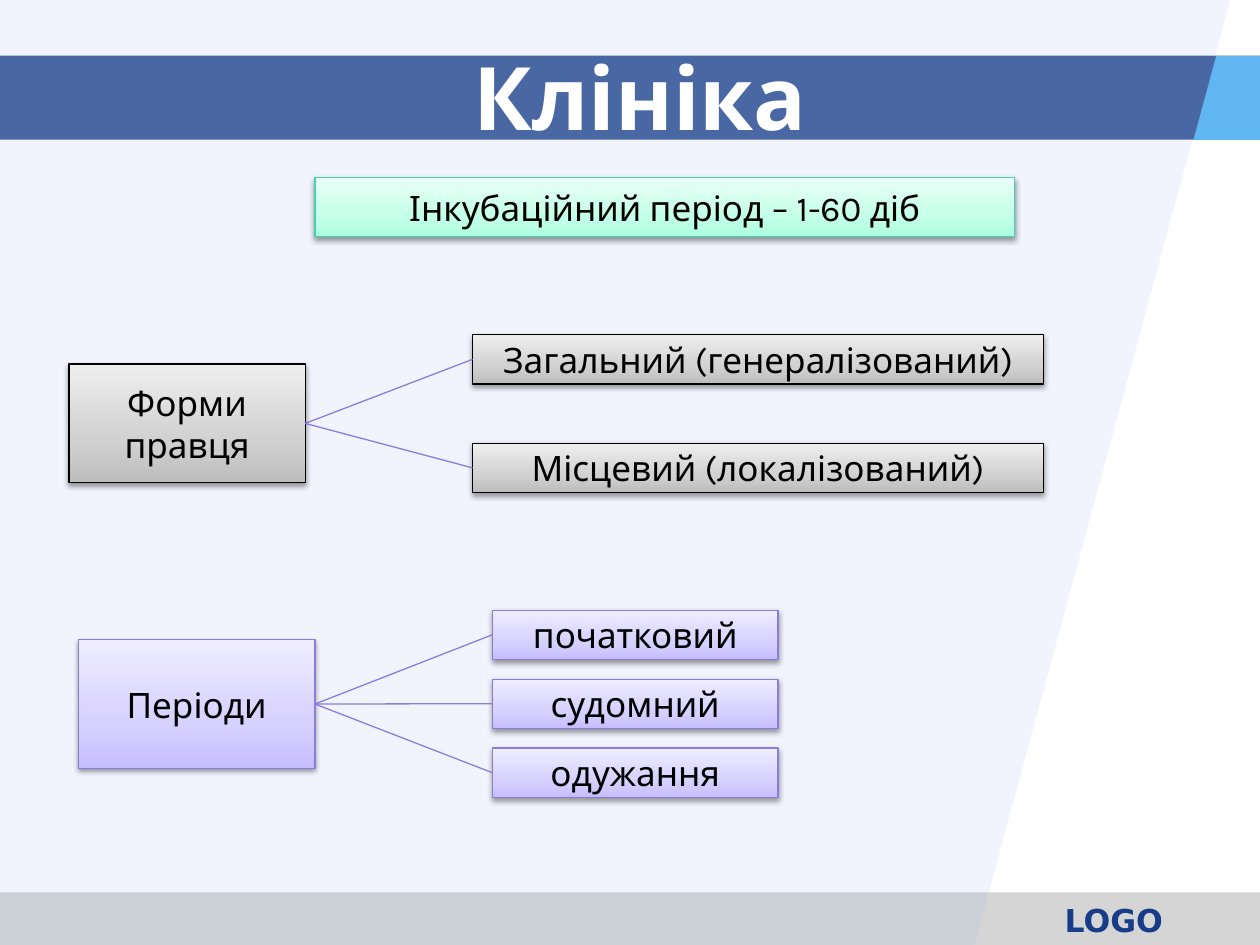
import pptx
import pptx.util
import pptx.dml.color
import pptx.enum.shapes
import pptx.enum.text
import pptx.oxml
import pptx.oxml.ns
import pptx.oxml.xmlchemy

Pt = pptx.util.Pt
qn = pptx.oxml.ns.qn

COLORS = {
    "footer": "969696", "panel": "94B1EC", "navy": "173D89", "sky": "5FB6F1",
    "white": "FFFFFF", "black": "000000", "violet": "8C7CDE", "mint": "47D1AD",
}
# Bottom, 35 % and top colours of each box, and its outline
GRADIENTS = {
    "mint": ("ADFFE2", "C4FFEA", "E9FFF7"),
    "black": ("BDBDBD", "D1D1D1", "EEEEEE"),
    "violet": ("C7BEFF", "D7D1FF", "EFEDFF"),
}
STOPS = (0, 35, 100)
FONT = "Karla"
CHILD_H = 28.1


def rgb(name):
    return pptx.dml.color.RGBColor.from_string(COLORS[name])


def add_child(parent, tag, **attrs):
    child = pptx.oxml.xmlchemy.OxmlElement(tag)
    for key, value in attrs.items():
        child.set(key, str(value))
    parent.append(child)
    return child


def paint(sp, color, alpha=100):
    """Flat fill without outline or shadow; alpha in percent."""
    sp.fill.solid()
    sp.fill.fore_color.rgb = rgb(color)
    sp.line.fill.background()
    sp.shadow.inherit = False
    if alpha < 100:
        clr = sp._element.spPr.find(qn("a:solidFill")).find(qn("a:srgbClr"))
        add_child(clr, "a:alpha", val=alpha * 1000)


def add_rect(s, x, y, w, h):
    kind = pptx.enum.shapes.MSO_SHAPE.RECTANGLE
    return s.shapes.add_shape(kind, Pt(x), Pt(y), Pt(w), Pt(h))


def add_band(s, x, y, w, h, color, alpha):
    paint(add_rect(s, x, y, w, h), color, alpha)


def add_polygon(s, points, color, alpha=100):
    fb = s.shapes.build_freeform(*points[0], scale=Pt(1))
    fb.add_line_segments(points[1:], close=True)
    paint(fb.convert_to_shape(), color, alpha)


def write(sp, text, size, color, font=FONT, bold=False):
    tf = sp.text_frame
    tf.word_wrap = True
    tf.vertical_anchor = pptx.enum.text.MSO_ANCHOR.MIDDLE
    tf.text = text
    p = tf.paragraphs[0]
    p.alignment = pptx.enum.text.PP_ALIGN.CENTER
    f = p.runs[0].font
    f.name, f.size, f.bold = font, Pt(size), bold
    f.color.rgb = rgb(color)


def add_label(s, x, y, w, h, *text_args, **text_options):
    write(s.shapes.add_textbox(Pt(x), Pt(y), Pt(w), Pt(h)), *text_args, **text_options)


def add_box(s, x, y, w, h, text, theme):
    """Gradient box with a soft shadow below it."""
    sp = add_rect(s, x, y, w, h)
    sp.fill.gradient()
    sp.fill.gradient_angle = 90
    stops = sp._element.spPr.find(qn("a:gradFill")).find(qn("a:gsLst"))
    for old in list(stops):
        stops.remove(old)
    for pos, color in zip(STOPS, GRADIENTS[theme]):
        add_child(add_child(stops, "a:gs", pos=pos * 1000), "a:srgbClr", val=color)
    sp.line.color.rgb = rgb(theme)
    sp.line.width = Pt(0.75)

    sp.shadow.inherit = False
    effects = sp._element.spPr.find(qn("a:effectLst"))
    shadow = add_child(effects, "a:outerShdw", blurRad=Pt(3.1), dist=Pt(1.6),
                       dir=90 * 60000, rotWithShape=0)
    clr = add_child(shadow, "a:srgbClr", val=COLORS["black"])
    add_child(clr, "a:alpha", val=38000)
    write(sp, text, 20, "black")
    return sp


def add_link(s, root, child):
    """Line from the right side of root to the left side of child."""
    kind = pptx.enum.shapes.MSO_CONNECTOR.STRAIGHT
    line = s.shapes.add_connector(kind, 0, 0, 0, 0)
    line.begin_connect(root, 3)
    line.end_connect(child, 1)
    line.line.color.rgb = rgb("violet")
    line.line.width = Pt(0.75)
    add_child(line._element.spPr, "a:effectLst")


def add_tree(s, root_box, root_text, x, y, w, step, names, theme):
    root = add_box(s, *root_box, root_text, theme)
    children = [add_box(s, x, y + i * step, w, CHILD_H, name, theme)
                for i, name in enumerate(names)]
    for child in children:
        add_link(s, root, child)


def main():
    prs = pptx.Presentation()
    prs.slide_width, prs.slide_height = Pt(720), Pt(540)
    s = prs.slides.add_slide(prs.slide_layouts[6])

    # Background
    add_band(s, 0, 510, 720, 30, "footer", 40)
    add_polygon(s, [(0, 0), (702.7, 0), (557.3, 539.5), (0, 540)], "panel", 13)
    add_band(s, 0, 31.8, 720, 48, "navy", 77)
    add_polygon(s, [(694.8, 31.8), (682.4, 79.8), (720, 79.8), (720, 31.8)], "sky")
    add_label(s, 594, 511.2, 85, 28.8, "LOGO", 18, "navy", font="DejaVu Sans", bold=True)

    # Title and incubation period
    add_label(s, 41.8, 32.4, 648, 44.6, "Клініка", 50, "white", bold=True)
    add_box(s, 180, 101.5, 399.6, 33.8, "Інкубаційний період – 1-60 діб", "mint")

    # Forms and periods of the disease
    add_tree(s, (39.4, 208.1, 135, 67.7), "Форми правця", 270, 191.3, 326.3, 62,
             ["Загальний (генералізований)", "Місцевий (локалізований)"], "black")
    add_tree(s, (44.8, 365.6, 135.2, 73.4), "Періоди", 281.3, 348.7, 163.3, 39.4,
             ["початковий", "судомний", "одужання"], "violet")

    prs.save("out.pptx")


if __name__ == "__main__":
    main()
